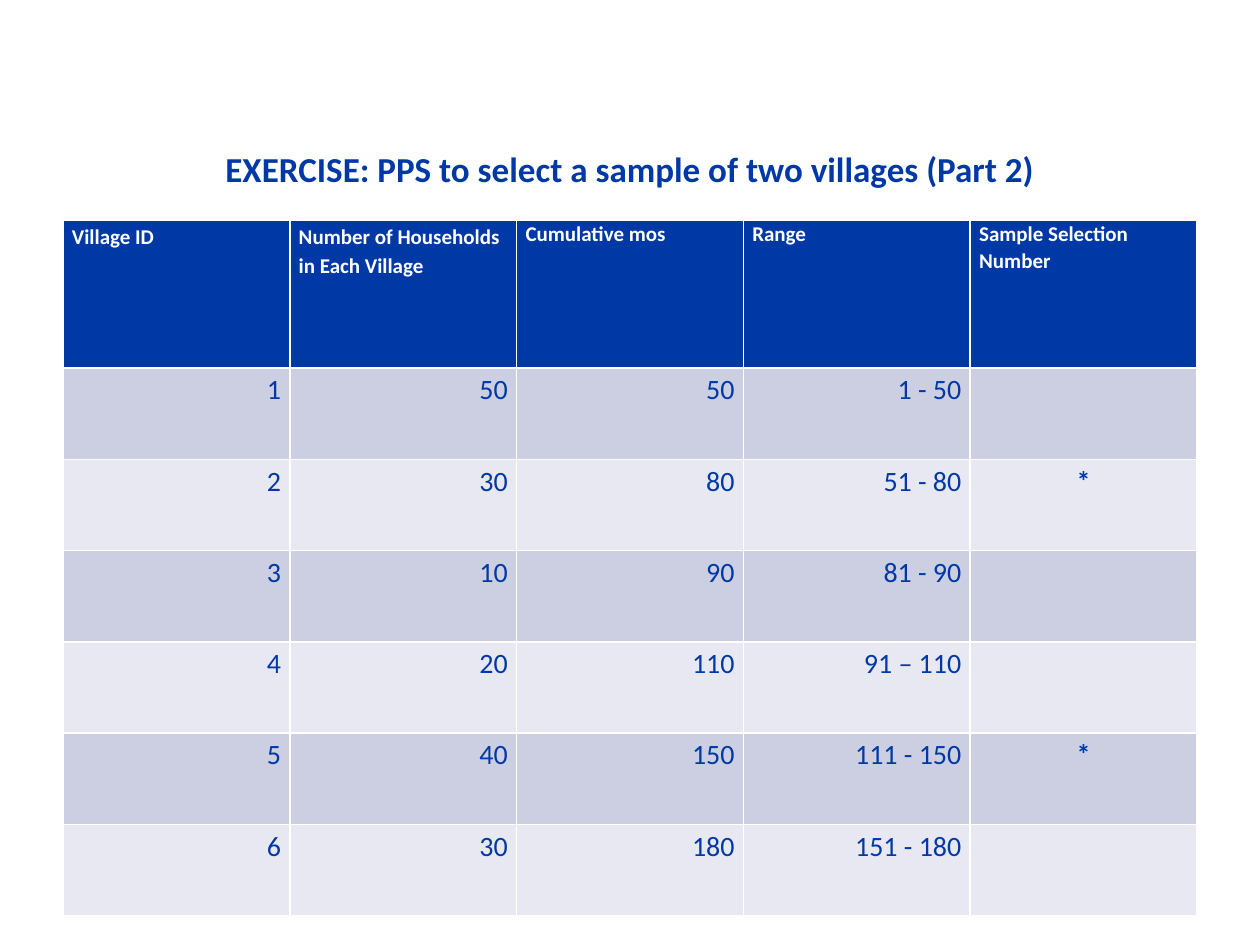
from pptx import Presentation
from pptx.dml.color import RGBColor
from pptx.enum.text import MSO_ANCHOR, PP_ALIGN
from pptx.util import Cm, Pt

FONT = "Calibri"
BLUE, WHITE = "0039A6", "FFFFFF"
BANDS = ("CCCEE1", "E7E8F1")

TITLE = "EXERCISE: PPS to select a sample of two villages (Part 2)"
HEADERS = [
    "Village ID",
    "Number of Households\nin Each Village",
    "Cumulative mos",
    "Range",
    "Sample Selection Number",
]
VILLAGES = [
    ("1", "50", "50", "1 - 50", ""),
    ("2", "30", "80", "51 - 80", "*"),
    ("3", "10", "90", "81 - 90", ""),
    ("4", "20", "110", "91 – 110", ""),
    ("5", "40", "150", "111 - 150", "*"),
    ("6", "30", "180", "151 - 180", ""),
]


def color(hex_string):
    return RGBColor.from_string(hex_string)


def format_text(text_frame, size, text_color, bold, alignment, line_spacing):
    for paragraph in text_frame.paragraphs:
        paragraph.alignment = alignment
        paragraph.line_spacing = line_spacing
        font = paragraph.font
        for run in paragraph.runs:
            font = run.font
            font.name, font.size, font.bold = FONT, Pt(size), bold
            font.color.rgb = color(text_color)


def fill_cell(cell, text, fill, **text_format):
    cell.fill.solid()
    cell.fill.fore_color.rgb = color(fill)
    cell.margin_left = cell.margin_right = Cm(0.18)
    cell.margin_top = cell.margin_bottom = 0
    cell.text_frame.text = text
    format_text(cell.text_frame, **text_format)


def place_title(slide, left, top, width, height):
    title = slide.shapes.title
    title.left, title.top, title.width, title.height = left, top, width, height
    title.text_frame.text = TITLE
    title.text_frame.vertical_anchor = MSO_ANCHOR.BOTTOM
    format_text(title.text_frame, 20, BLUE, True, PP_ALIGN.CENTER, Pt(30))


def place_village_table(slide, left, top, width, header_height, row_height):
    row_count, column_count = len(VILLAGES) + 1, len(HEADERS)
    height = header_height + row_height * len(VILLAGES)
    table = slide.shapes.add_table(
        row_count, column_count, left, top, width, height
    ).table
    for row in table.rows:
        row.height = row_height
    table.rows[0].height = header_height

    # Header row: the first two columns are set slightly looser
    for column, header in enumerate(HEADERS):
        fill_cell(table.cell(0, column), header, BLUE, size=12, text_color=WHITE,
                  bold=True, alignment=PP_ALIGN.LEFT,
                  line_spacing=1.15 if column < 2 else 1.05)

    # Village rows: figures on the right, selection marks centred
    for row, village in enumerate(VILLAGES, start=1):
        for column, value in enumerate(village):
            is_mark = column == column_count - 1
            fill_cell(table.cell(row, column), value, BANDS[(row - 1) % 2],
                      size=16, text_color=BLUE, bold=is_mark,
                      alignment=PP_ALIGN.CENTER if is_mark else PP_ALIGN.RIGHT,
                      line_spacing=1.15)


def main():
    presentation = Presentation()
    presentation.slide_width, presentation.slide_height = Cm(25.4), Cm(19.05)
    slide = presentation.slides.add_slide(presentation.slide_layouts[5])
    left, width = Cm(1.27), Cm(22.86)
    place_title(slide, left, Cm(0.76), width, Cm(3.18))
    place_village_table(slide, left, Cm(4.45), width, Cm(2.97), Cm(1.84))
    presentation.save("out.pptx")


if __name__ == "__main__":
    main()
